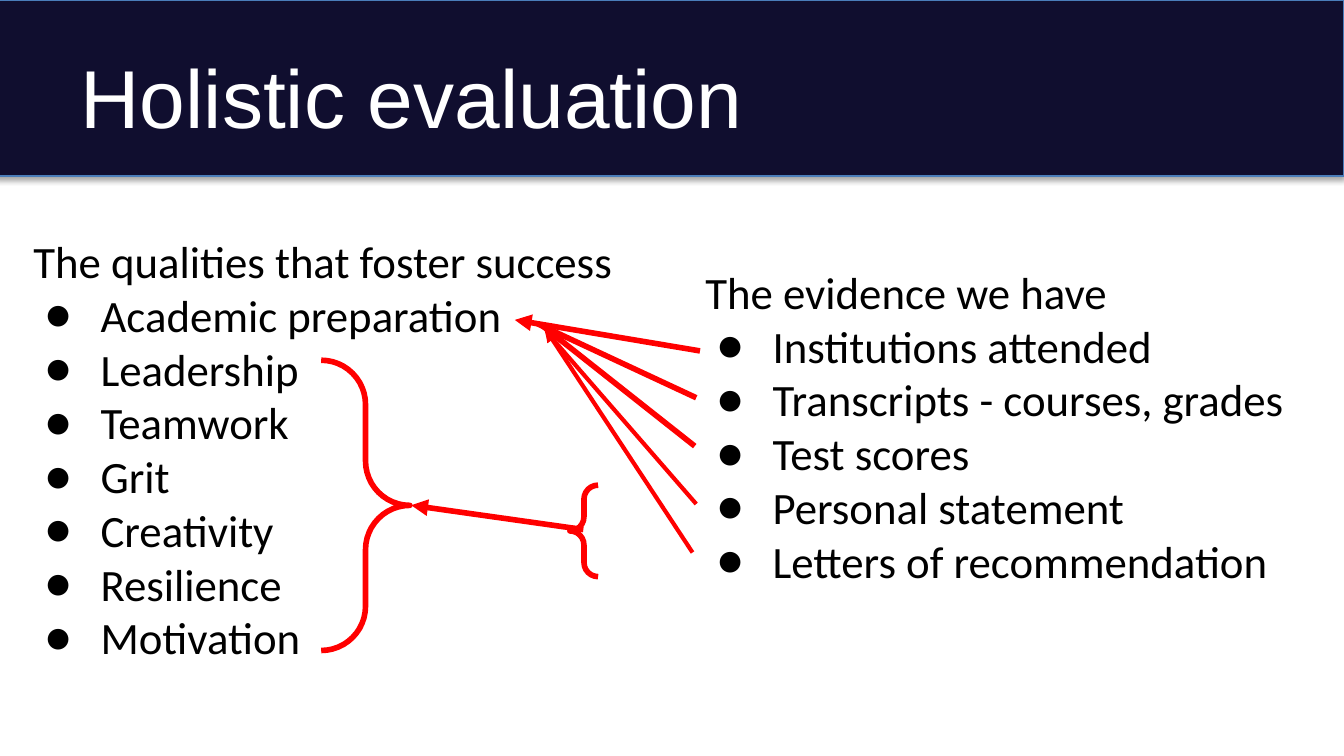
import pptx
import pptx.util
import pptx.dml.color
import pptx.enum.shapes
import pptx.enum.text
import pptx.oxml
import pptx.oxml.ns
from lxml import etree

Pt = pptx.util.Pt
SHAPES = pptx.enum.shapes.MSO_SHAPE
RED, BLACK, WHITE, NAVY, BLUE = "FF0000", "000000", "FFFFFF", "100E2F", "4A7DBA"

TITLE = "Holistic evaluation"
COLUMNS = [
    ((10.8, 118.1, 324.7, 247), "The qualities that foster success",
     ["Academic preparation", "Leadership", "Teamwork", "Grit",
      "Creativity", "Resilience", "Motivation"]),
    ((370.8, 134.6, 324.7, 189.4), "The evidence we have",
     ["Institutions attended", "Transcripts - courses, grades", "Test scores",
      "Personal statement", "Letters of recommendation"]),
]
EVIDENCE_LINES = [
    ((375, 188), (275.8, 171.4), 3, True),
    ((373, 213.1), (288, 173.5), 3, False),
    ((372.2, 239), (290.2, 174.2), 3, False),
    ((373, 270), (291.6, 176.4), 2.25, True),
    ((371, 296), (292.3, 176.4), 2.25, True),
]
EVIDENCE_BRACE = (305.3, 259.9, 15.1, 49)
QUALITIES_BRACE = (172.1, 193, 47.5, 155.5)
BRACE_LINK = ((312.5, 283.7), (220.3, 270.7), 3, True)


def colour(value):
    return pptx.dml.color.RGBColor.from_string(value)


def add_xml(parent, tag, **attributes):
    element = etree.SubElement(parent, pptx.oxml.ns.qn(tag))
    for key, value in attributes.items():
        element.set(key, value)
    return element


def style_line(shape, value, width):
    shape.line.color.rgb = colour(value)
    shape.line.width = Pt(width)


def add_run(paragraph, text, font, size, value):
    run = paragraph.add_run()
    run.text = text
    run.font.name = font
    run.font.size = Pt(size)
    run.font.color.rgb = colour(value)


def add_shape(slide, kind, box, fill, line, width):
    shape = slide.shapes.add_shape(kind, *map(Pt, box))
    shape.shadow.inherit = False
    if fill:
        shape.fill.solid()
        shape.fill.fore_color.rgb = colour(fill)
    else:
        shape.fill.background()
    style_line(shape, line, width)
    return shape


def add_banner(slide):
    banner = add_shape(slide, SHAPES.RECTANGLE, (-2.9, 0, 722.9, 94.3), NAVY, BLUE, 0.75)
    effects = banner._element.spPr.find(pptx.oxml.ns.qn("a:effectLst"))
    shadow = add_xml(effects, "a:outerShdw", blurRad=str(Pt(3.1)), dist=str(Pt(1.8)),
                     dir="5400000", rotWithShape="0")
    add_xml(add_xml(shadow, "a:srgbClr", val=BLACK), "a:alpha", val="35000")
    slide.shapes._spTree.insert(2, banner._element)


def add_title(slide):
    title = slide.shapes.title
    title.left, title.top, title.width, title.height = map(Pt, (36, 17.3, 648, 67.7))
    frame = title.text_frame
    frame.auto_size = pptx.enum.text.MSO_AUTO_SIZE.NONE
    frame.vertical_anchor = pptx.enum.text.MSO_ANCHOR.MIDDLE
    frame.paragraphs[0].alignment = pptx.enum.text.PP_ALIGN.LEFT
    add_run(frame.paragraphs[0], TITLE, "Arial", 44, WHITE)


def add_column(slide, box, heading, items):
    frame = slide.shapes.add_textbox(*map(Pt, box)).text_frame
    frame.word_wrap = True
    frame.margin_left = frame.margin_right = Pt(7.2)
    frame.margin_top = frame.margin_bottom = Pt(7.2)
    add_run(frame.paragraphs[0], heading, "Calibri", 24, BLACK)
    for item in items:
        paragraph = frame.add_paragraph()
        properties = paragraph._p.get_or_add_pPr()
        properties.set("marL", str(Pt(36)))
        properties.set("indent", str(-Pt(30)))
        add_xml(add_xml(properties, "a:buClr"), "a:srgbClr", val=BLACK)
        add_xml(properties, "a:buFont", typeface="Calibri")
        add_xml(properties, "a:buChar", char="●")
        add_run(paragraph, item, "Calibri", 24, BLACK)


def add_line(slide, start, end, width, arrow):
    line = slide.shapes.add_connector(
        pptx.enum.shapes.MSO_CONNECTOR.STRAIGHT, *map(Pt, start + end))
    style_line(line, RED, width)
    if arrow:
        add_xml(line.line._get_or_add_ln(), "a:tailEnd", type="triangle")
    add_xml(line._element.spPr, "a:effectLst")


def add_brace(slide, kind, box, fill):
    brace = add_shape(slide, kind, box, fill, RED, 3)
    brace.adjustments[0] = 0.5
    brace.adjustments[1] = 0.5


def main():
    deck = pptx.Presentation()
    deck.slide_width, deck.slide_height = Pt(720), Pt(405)
    slide = deck.slides.add_slide(deck.slide_layouts[5])
    add_banner(slide)
    add_title(slide)
    for column in COLUMNS:
        add_column(slide, *column)
    for line in EVIDENCE_LINES:
        add_line(slide, *line)
    add_brace(slide, SHAPES.LEFT_BRACE, EVIDENCE_BRACE, None)
    add_line(slide, *BRACE_LINK)
    add_brace(slide, SHAPES.RIGHT_BRACE, QUALITIES_BRACE, WHITE)
    deck.save("out.pptx")


if __name__ == "__main__":
    main()
